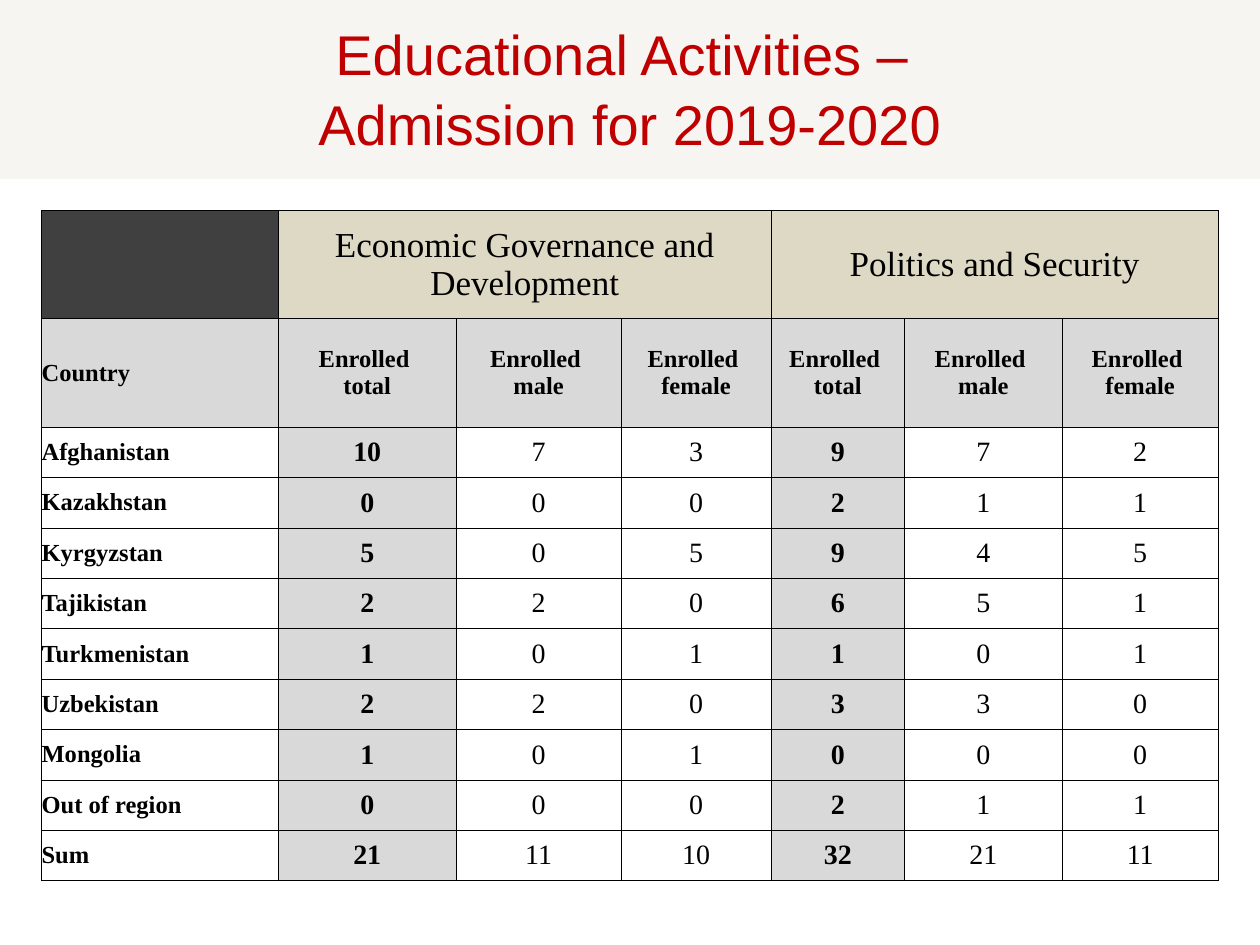
from lxml import etree
from pptx import Presentation
from pptx import util as u
from pptx.dml.color import RGBColor
from pptx.enum import shapes, text
from pptx.oxml.ns import qn

RED = RGBColor(0xC0, 0x00, 0x00)
BLACK = RGBColor(0x00, 0x00, 0x00)
CREAM = RGBColor(0xF6, 0xF5, 0xF1)
CHARCOAL = RGBColor(0x40, 0x40, 0x40)
SAND = RGBColor(0xDD, 0xD9, 0xC4)
GREY = RGBColor(0xD9, 0xD9, 0xD9)

PROGRAMMES = ["Economic Governance and Development", "Politics and Security"]
HEADINGS = ["Enrolled \ntotal", "Enrolled \nmale", "Enrolled \nfemale"]
ENROLMENT = [
    ("Afghanistan", 10, 7, 3, 9, 7, 2),
    ("Kazakhstan", 0, 0, 0, 2, 1, 1),
    ("Kyrgyzstan", 5, 0, 5, 9, 4, 5),
    ("Tajikistan", 2, 2, 0, 6, 5, 1),
    ("Turkmenistan", 1, 0, 1, 1, 0, 1),
    ("Uzbekistan", 2, 2, 0, 3, 3, 0),
    ("Mongolia", 1, 0, 1, 0, 0, 0),
    ("Out of region", 0, 0, 0, 2, 1, 1),
    ("Sum", 21, 11, 10, 32, 21, 11),
]
COLUMNS = [1.88, 1.41, 1.31, 1.19, 1.06, 1.25, 1.24]
ROWS = [0.86] * 2 + [0.4] * len(ENROLMENT)
TOTAL_COLUMNS = (1, 4)


def write(frame, words, size, font="Times New Roman", color=BLACK,
          bold=False, align=text.PP_ALIGN.CENTER, spacing=None):
    frame.text = words
    for paragraph in frame.paragraphs:
        paragraph.alignment = align
        paragraph.line_spacing = spacing
        for run in paragraph.runs:
            run.font.name = font
            run.font.size = u.Pt(size)
            run.font.bold = bold
            run.font.color.rgb = color


def style_cell(cell, fill):
    cell.margin_left = cell.margin_right = cell.margin_top = cell.margin_bottom = 0
    cell.vertical_anchor = text.MSO_ANCHOR.MIDDLE
    if fill is None:
        cell.fill.background()
    else:
        cell.fill.solid()
        cell.fill.fore_color.rgb = fill
    # Borders come before the fill in the cell properties
    properties = cell._tc.get_or_add_tcPr()
    for order, side in enumerate(("a:lnL", "a:lnR", "a:lnT", "a:lnB")):
        border = etree.Element(qn(side), w=str(u.Pt(0.5)))
        line_fill = etree.SubElement(border, qn("a:solidFill"))
        etree.SubElement(line_fill, qn("a:srgbClr"), val=str(BLACK))
        properties.insert(order, border)


deck = Presentation()
deck.slide_width, deck.slide_height = u.Inches(10), u.Inches(7.5)
slide = deck.slides.add_slide(deck.slide_layouts[5])

# Band behind the title
band = slide.shapes.add_shape(shapes.MSO_SHAPE.RECTANGLE, 0, 0,
                              deck.slide_width, u.Inches(1.42))
band.shadow.inherit = False
band.fill.solid()
band.fill.fore_color.rgb = CREAM
band.line.fill.background()
title = slide.shapes.title
title._element.addprevious(band._element)

# Title
title.left, title.top = u.Inches(0.5), u.Inches(0.08)
title.width, title.height = u.Inches(9), u.Inches(1.33)
title.text_frame.vertical_anchor = text.MSO_ANCHOR.MIDDLE
title.text_frame.margin_bottom = u.Inches(0.16)
write(title.text_frame, "Educational Activities – \vAdmission for 2019-2020", 32,
      font="Arial", color=RED, spacing=1.04)

# Table grid
admission = slide.shapes.add_table(
    len(ROWS), len(COLUMNS), u.Inches(0.33), u.Inches(1.67),
    u.Inches(sum(COLUMNS)), u.Inches(sum(ROWS))).table
admission.first_row = admission.horz_banding = False
for column, width in zip(admission.columns, COLUMNS):
    column.width = u.Inches(width)
for row, height in zip(admission.rows, ROWS):
    row.height = u.Inches(height)

# Programme row
for c in range(len(COLUMNS)):
    style_cell(admission.cell(0, c), SAND if c else CHARCOAL)
for first, programme in zip(TOTAL_COLUMNS, PROGRAMMES):
    heading = admission.cell(0, first)
    heading.merge(admission.cell(0, first + 2))
    write(heading.text_frame, programme, 20)

# Column headings, countries and figures
for r, record in enumerate([("Country", *HEADINGS, *HEADINGS), *ENROLMENT], start=1):
    for c, value in enumerate(record):
        cell = admission.cell(r, c)
        is_heading, is_total = r == 1, c in TOTAL_COLUMNS
        style_cell(cell, GREY if is_heading or is_total else None)
        write(cell.text_frame, str(value),
              14 if is_heading or c == 0 else 16,
              bold=is_heading or is_total or c == 0,
              align=text.PP_ALIGN.CENTER if c else text.PP_ALIGN.LEFT)

deck.save("out.pptx")
